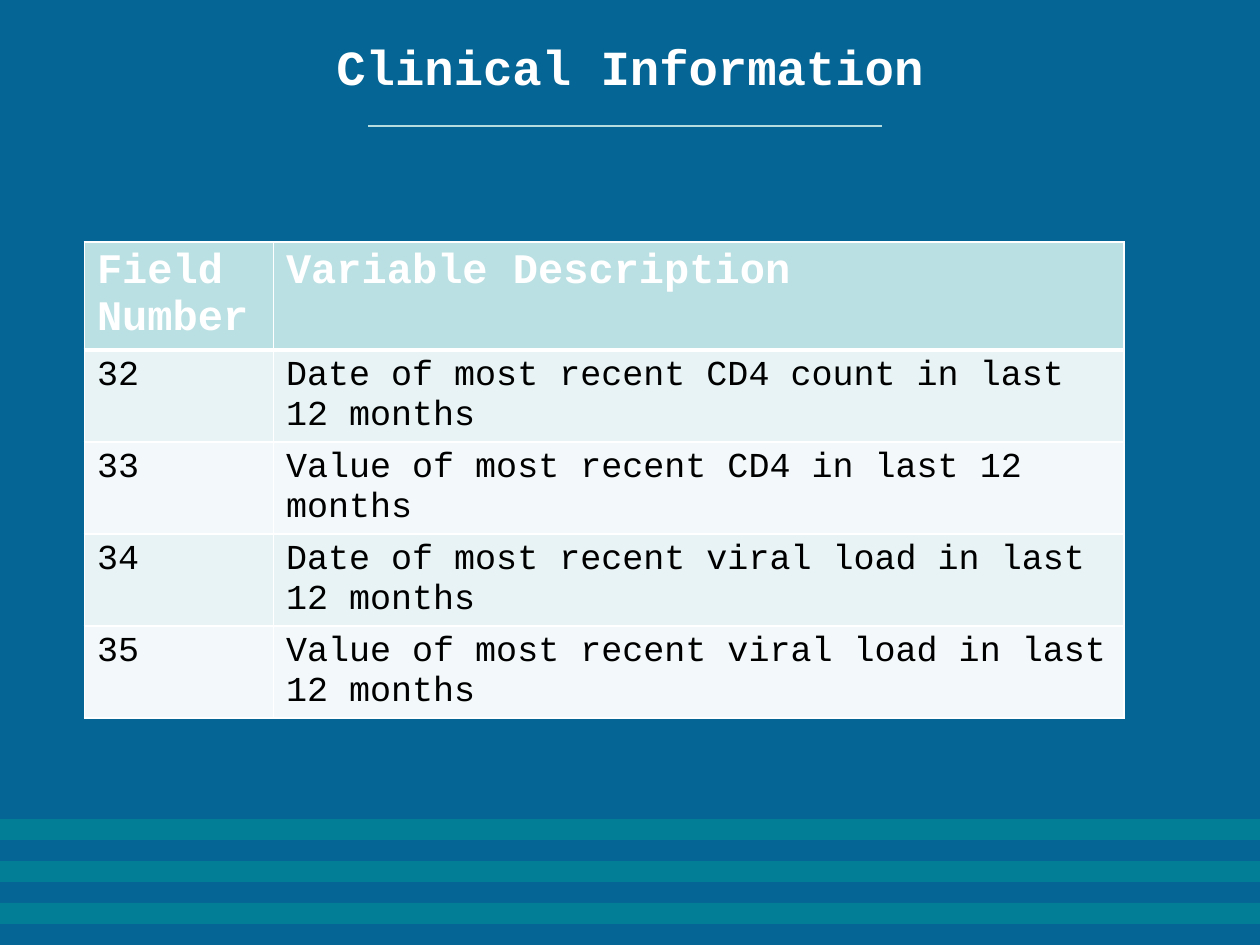
from lxml import etree
from pptx import Presentation, util as u
from pptx.dml.color import RGBColor
from pptx.enum import shapes, text
from pptx.oxml.ns import qn

WIDTH, HEIGHT = 10, 7.5
FONT = "Courier New"
WHITE, BLACK = "FFFFFF", "000000"
BACKGROUND, STRIPE, RULE = "056594", "009999", "B6DCDF"
HEADER_FILL, BAND_FILLS = "BBE0E3", ("E7F3F4", "F3F9FA")
COLUMN_WIDTHS = (1.5, 6.75)
HEADER_HEIGHT, ROW_HEIGHT = 0.57, 0.41
ROWS = [
    ("Field Number", "Variable Description"),
    ("32", "Date of most recent CD4 count in last 12 months"),
    ("33", "Value of most recent CD4 in last 12 months"),
    ("34", "Date of most recent viral load in last 12 months"),
    ("35", "Value of most recent viral load in last 12 months"),
]


def color(hex_string):
    return RGBColor.from_string(hex_string)


def paint(fill, hex_string):
    fill.solid()
    fill.fore_color.rgb = color(hex_string)


def set_font(paragraph, size, hex_string, bold):
    font = paragraph.font
    font.name, font.size, font.bold = FONT, u.Pt(size), bold
    font.color.rgb = color(hex_string)


def add_stripe(slide, top):
    height = HEIGHT / 45
    stripe = slide.shapes.add_shape(
        shapes.MSO_SHAPE.RECTANGLE, 0, u.Inches(top), u.Inches(WIDTH), u.Inches(height))
    stripe.shadow.inherit = False
    paint(stripe.fill, STRIPE)
    stripe.line.fill.background()
    solid_color = stripe._element.spPr.find(qn("a:solidFill"))[0]
    etree.SubElement(solid_color, qn("a:alpha"), val="49000")


def format_title(slide, title):
    shape = slide.shapes.title
    shape.left, shape.top = u.Inches(0.5), u.Inches(0.17)
    shape.width, shape.height = u.Inches(WIDTH - 1), u.Inches(0.7)
    frame = shape.text_frame
    frame.text = title
    frame.auto_size = text.MSO_AUTO_SIZE.NONE
    frame.vertical_anchor = text.MSO_ANCHOR.MIDDLE
    paragraph = frame.paragraphs[0]
    paragraph.alignment = text.PP_ALIGN.CENTER
    set_font(paragraph, 28, WHITE, True)


def add_rule(slide, start, end, top):
    rule = slide.shapes.add_connector(
        shapes.MSO_CONNECTOR.STRAIGHT,
        u.Inches(start), u.Inches(top), u.Inches(end), u.Inches(top))
    rule.line.color.rgb = color(RULE)
    rule.line.width = u.Pt(0.75)
    etree.SubElement(rule._element.spPr, qn("a:effectLst"))


def add_borders(cell, **widths):
    """Draw white borders; widths are points for the sides L, R, T and B."""
    properties = cell._tc.get_or_add_tcPr()
    for side, width in widths.items():
        line = etree.SubElement(properties, qn(f"a:ln{side}"), w=str(u.Pt(width)))
        fill = etree.SubElement(line, qn("a:solidFill"))
        etree.SubElement(fill, qn("a:srgbClr"), val=WHITE)


def add_field_table(slide, left, top):
    height = HEADER_HEIGHT + ROW_HEIGHT * (len(ROWS) - 1)
    table = slide.shapes.add_table(
        len(ROWS), len(COLUMN_WIDTHS), u.Inches(left), u.Inches(top),
        u.Inches(sum(COLUMN_WIDTHS)), u.Inches(height)).table
    for column, width in zip(table.columns, COLUMN_WIDTHS):
        column.width = u.Inches(width)
    for index, values in enumerate(ROWS):
        header = index == 0
        table.rows[index].height = u.Inches(HEADER_HEIGHT if header else ROW_HEIGHT)
        for column, value in enumerate(values):
            cell = table.cell(index, column)
            cell.text = value
            add_borders(cell, L=1, R=1, T=3 if index == 1 else 1, B=3 if header else 1)
            paint(cell.fill, HEADER_FILL if header else BAND_FILLS[(index - 1) % 2])
            set_font(cell.text_frame.paragraphs[0], 24 if header else 20,
                     WHITE if header else BLACK, header)


def main():
    presentation = Presentation()
    presentation.slide_width, presentation.slide_height = u.Inches(WIDTH), u.Inches(HEIGHT)
    slide = presentation.slides.add_slide(presentation.slide_layouts.get_by_name("Title Only"))
    paint(slide.background.fill, BACKGROUND)
    for number in range(3):
        add_stripe(slide, 6.5 + number * HEIGHT * 2 / 45)
    format_title(slide, "Clinical Information")
    add_rule(slide, 7, 2.92, 1)
    add_field_table(slide, 0.67, 1.92)
    presentation.save("out.pptx")


if __name__ == "__main__":
    main()
